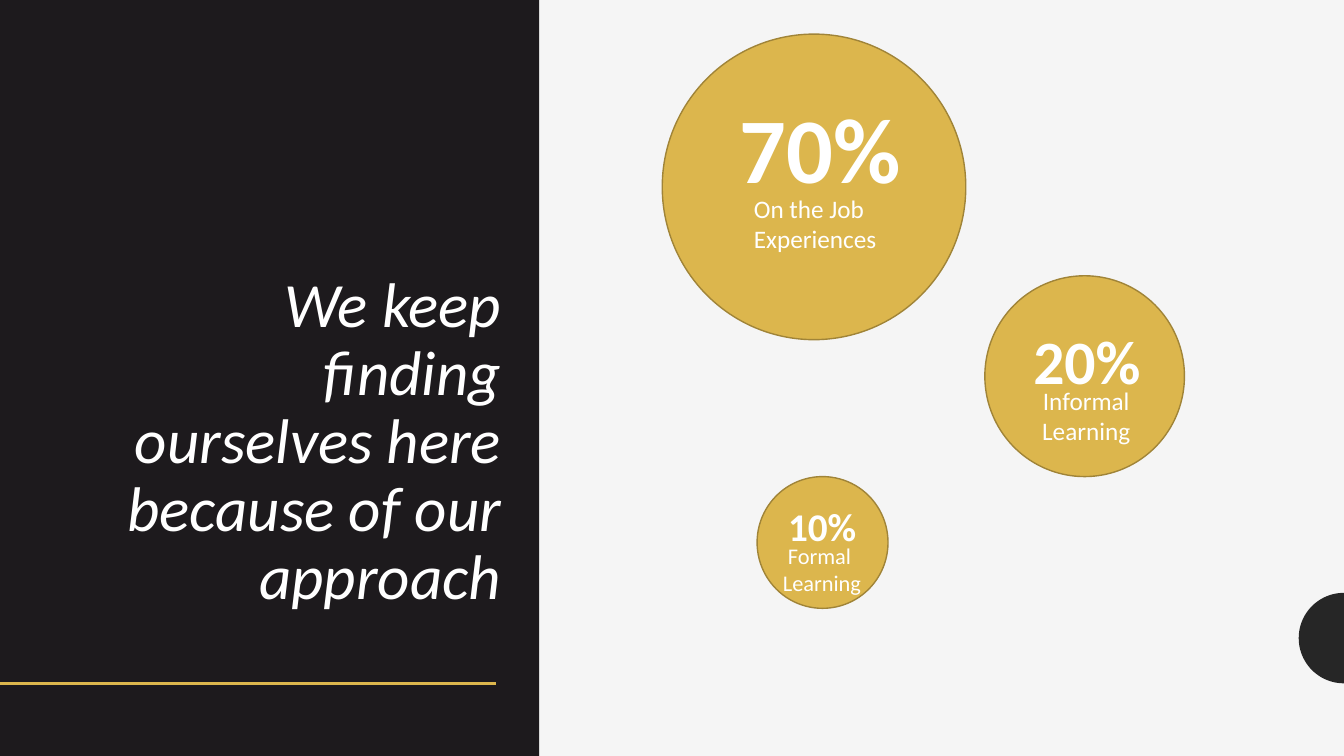
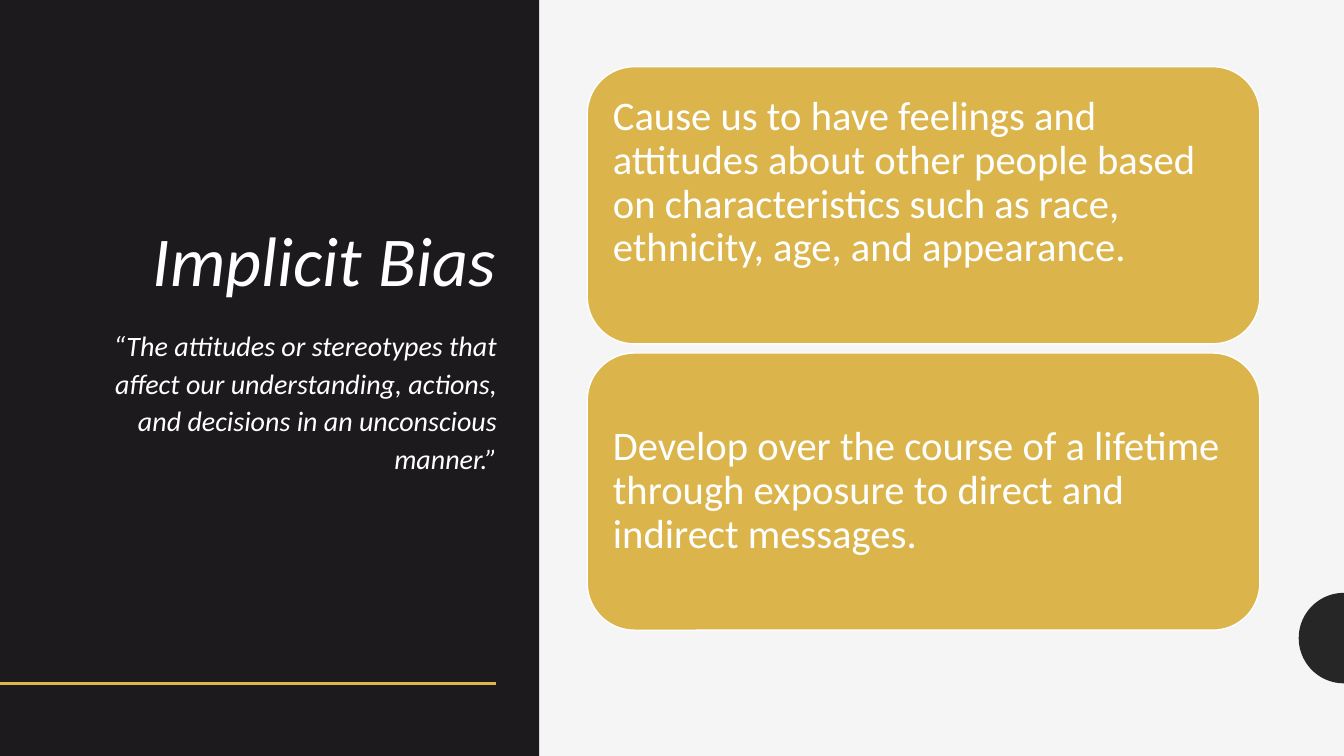
from math import cos, pi, sin
from lxml.etree import SubElement
from pptx import Presentation
from pptx.dml.color import RGBColor
from pptx.enum.shapes import MSO_CONNECTOR as Link, MSO_SHAPE as Form
from pptx.enum.text import MSO_ANCHOR as Anchor, PP_ALIGN as Align
from pptx.oxml.ns import qn
from pptx.util import Cm, Pt

FONT = "Calibri"
WHITE, PAPER, DARK, TAB = "FFFFFF", "F5F5F5", "1D1A1D", "262626"
GOLD, EDGE, CARD = "DCB64D", "A08438", "DBB44B"
WIDE, HIGH = 33.87, 19.05
PANEL = (0, 0, 13.59, HIGH)


def tint(code):
    return RGBColor.from_string(code)


def paint(shape, fill, edge=None):
    shape.shadow.inherit = False
    shape.fill.solid()
    shape.fill.fore_color.rgb = tint(fill)
    if edge:
        shape.line.color.rgb = tint(edge)
        shape.line.width = Pt(1)
    else:
        shape.line.fill.background()


def block(slide, form, box, fill, edge=None):
    shape = slide.shapes.add_shape(form, *map(Cm, box))
    paint(shape, fill, edge)
    return shape


def write(shape, lines, size, align=Align.LEFT, anchor=Anchor.TOP,
          lead=None, bold=False, slant=False):
    frame = shape.text_frame
    frame.word_wrap = True
    frame.vertical_anchor = anchor
    for i, line in enumerate(lines):
        para = frame.paragraphs[0] if i == 0 else frame.add_paragraph()
        para.alignment = align
        if lead:
            para.line_spacing = lead
        run = para.add_run()
        run.text = line
        font = run.font
        font.name, font.size = FONT, Pt(size)
        font.bold, font.italic = bold, slant
        font.color.rgb = tint(WHITE)


def label(slide, box, lines, size, **style):
    write(slide.shapes.add_textbox(*map(Cm, box)), lines, size, **style)


def title(slide, box, text, size):
    label(slide, box, [text], size, align=Align.RIGHT,
          anchor=Anchor.BOTTOM, lead=0.9, slant=True)


def panel(slide, box):
    left, top, wide, high = box
    block(slide, Form.RECTANGLE, box, DARK)
    base = top + high - 1.83
    rule = slide.shapes.add_connector(
        Link.STRAIGHT, Cm(left), Cm(base), Cm(left + wide - 1.09), Cm(base))
    rule.line.color.rgb = tint(GOLD)
    rule.line.width = Pt(2)
    SubElement(rule._element.spPr, qn("a:effectLst"))


def half(slide, x, y, size, steps=48):
    arc = [(Cm(x - size * sin(pi * i / steps)),
            Cm(y - size * cos(pi * i / steps))) for i in range(steps + 1)]
    draw = slide.shapes.build_freeform(*arc[0])
    draw.add_line_segments(arc[1:], close=True)
    paint(draw.convert_to_shape(), TAB)


def start(deck):
    slide = deck.slides.add_slide(deck.slide_layouts[6])
    back = slide.background.fill
    back.solid()
    back.fore_color.rgb = tint(PAPER)
    half(slide, WIDE, 16.08, 1.14)
    panel(slide, PANEL)
    return slide


def bubble(slide, box, share, big, spot, lines, small, place, align):
    left, top = box[:2]
    block(slide, Form.OVAL, box, GOLD, EDGE)
    for (x, y, wide, high), text, size, style in (
            (spot, [share], big, {"bold": True}),
            (place, lines, small, {"align": align})):
        label(slide, (left + x, top + y, wide, high), text, size, **style)


def cards(slide, box, texts, gap=0.23):
    left, top, wide, high = box
    tall = (high - gap * (len(texts) - 1)) / len(texts)
    for i, (text, foot) in enumerate(texts):
        spot = (left, top + i * (tall + gap), wide, tall)
        card = block(slide, Form.ROUNDED_RECTANGLE, spot, CARD, WHITE)
        card.adjustments[0] = 0.17
        frame = card.text_frame
        frame.margin_left = frame.margin_right = frame.margin_top = Cm(0.3)
        frame.margin_bottom = Cm(foot)
        write(card, [text], 29, anchor=Anchor.MIDDLE, lead=0.9)


def shares(deck):
    slide = start(deck)
    title(slide, (2.24, 8.46, 10.64, 7.11),
          "We keep finding ourselves here because of our approach", 45)
    bubble(slide, (16.69, 0.86, 7.65, 7.7),
           "70%", 66, (1.7, 1.32, 4.67, 3.07),
           ["On the Job Experiences"], 18, (2.06, 3.89, 4.95, 1.8), Align.LEFT)
    bubble(slide, (24.82, 6.95, 5.03, 5.06),
           "20%", 44, (0.97, 1.07, 4.67, 2.13),
           ["Informal Learning"], 18, (0.08, 2.64, 4.95, 1.8), Align.CENTER)
    bubble(slide, (19.08, 12.01, 3.3, 3.32),
           "10%", 28, (0.53, 0.53, 4.67, 1.45),
           ["Formal ", "Learning"], 16, (-0.84, 1.52, 4.95, 1.63), Align.CENTER)


def bias(deck):
    slide = start(deck)
    title(slide, (2.11, 1.55, 10.64, 6.17), "Implicit Bias", 50)
    label(slide, (2.11, 8.05, 10.67, 7.92),
          ["“The attitudes or stereotypes that affect our understanding, "
           "actions, and decisions in an unconscious manner.”"],
          20, align=Align.RIGHT, lead=1.12, slant=True)
    cards(slide, (14.8, 1.68, 16.95, 14.2), [
        ("Cause us to have feelings and attitudes about other people based "
         "on characteristics such as race, ethnicity, age, and appearance.",
         1.42),
        ("Develop over the course of a lifetime through exposure to direct "
         "and indirect messages.", 0.3)])


def main():
    deck = Presentation()
    deck.slide_width, deck.slide_height = Cm(WIDE), Cm(HIGH)
    shares(deck)
    bias(deck)
    deck.save("out.pptx")


if __name__ == "__main__":
    main()
